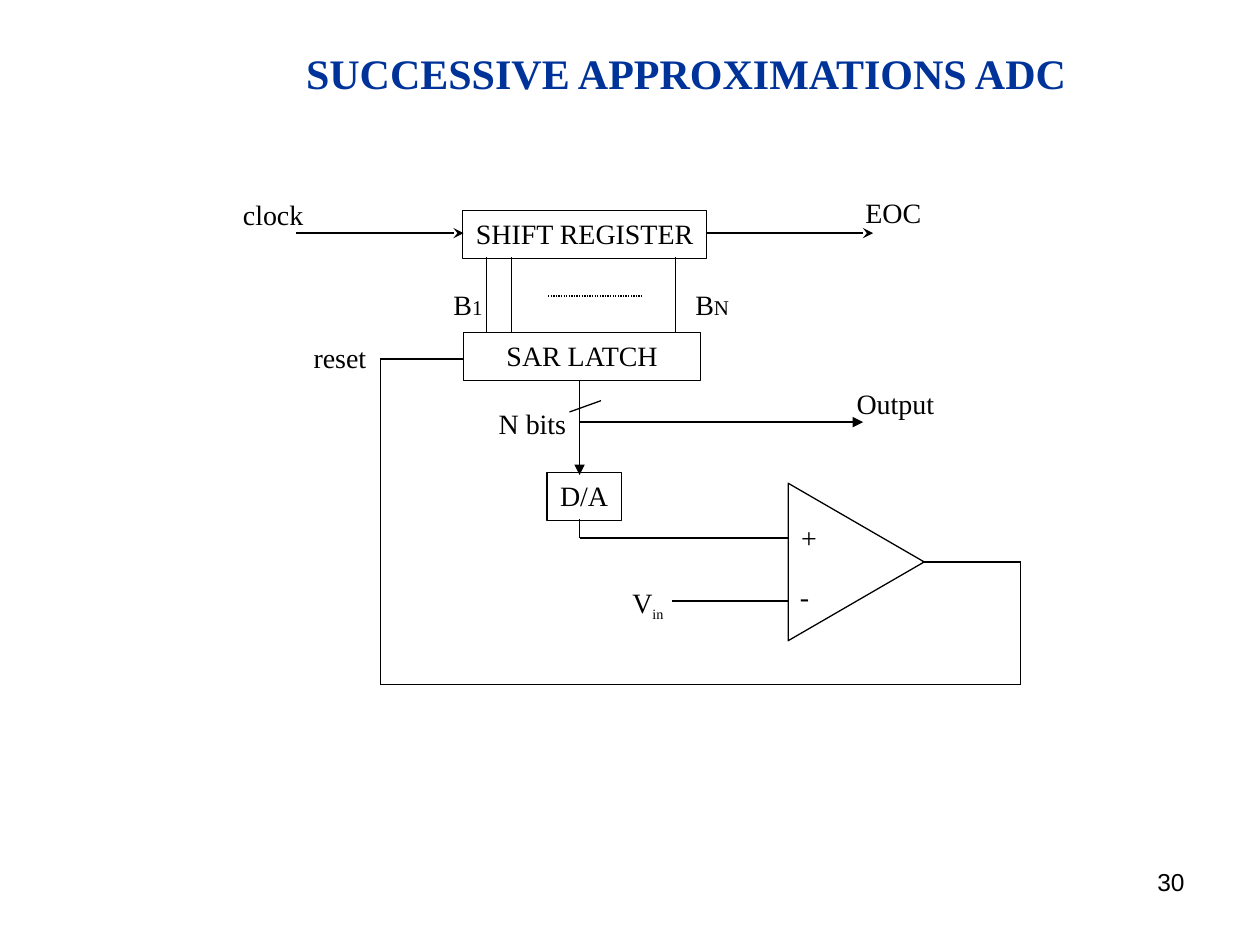
from dataclasses import dataclass

from lxml import etree
from pptx import Presentation
from pptx import util as u
from pptx.dml.color import RGBColor
from pptx.enum import dml, shapes, text
from pptx.oxml import ns

COLS, ROWS = 100, 75


@dataclass(frozen=True)
class Theme:
    ink: str = "000000"
    head: str = "003399"
    serif: str = "Times New Roman"
    sans: str = "Arial"
    title: int = 24
    body: int = 16
    page: int = 14
    sub: int = 14
    small: int = 12
    line: float = 0.75


T = Theme()
WIDE, HIGH = u.Inches(10), u.Inches(7.5)
LEFT, MID, RIGHT = text.PP_ALIGN.LEFT, text.PP_ALIGN.CENTER, text.PP_ALIGN.RIGHT


def col(n):
    return round(WIDE * n / COLS)


def row(n):
    return round(HIGH * n / ROWS)


def area(x, y, w, h):
    return col(x), row(y), col(w), row(h)


def add_run(para, words, size=T.body, font=T.serif, hue=T.ink, bold=False, drop=0):
    run = para.add_run()
    run.text = words
    run.font.size = u.Pt(size)
    run.font.name = font
    run.font.bold = bold
    run.font.color.rgb = RGBColor.from_string(hue)
    if drop:
        run.font._element.set("baseline", str(drop * 1000))


def set_up(frame, align, wrap=False):
    frame.word_wrap = wrap
    frame.vertical_anchor = text.MSO_ANCHOR.TOP
    para = frame.paragraphs[0]
    para.alignment = align
    return para


def label(slide, spot, words, align=LEFT, wrap=False, **style):
    box = slide.shapes.add_textbox(*area(*spot))
    para = set_up(box.text_frame, align, wrap)
    add_run(para, words, **style)
    return para


def ink_line(line):
    line.color.rgb = RGBColor.from_string(T.ink)
    line.width = u.Pt(T.line)


def outline(slide, kind, spot):
    shape = slide.shapes.add_shape(kind, *area(*spot))
    shape.shadow.inherit = False
    shape.fill.background()
    ink_line(shape.line)
    return shape


def block(slide, spot, words):
    shape = outline(slide, shapes.MSO_SHAPE.RECTANGLE, spot)
    add_run(set_up(shape.text_frame, MID), words)


def wire(slide, x1, y1, x2, y2, tip=None, dash=None):
    link = slide.shapes.add_connector(
        shapes.MSO_CONNECTOR.STRAIGHT, col(x1), row(y1), col(x2), row(y2))
    ink_line(link.line)
    if dash:
        link.line.dash_style = dash
    if tip:
        end = etree.SubElement(link.line._get_or_add_ln(), ns.qn("a:tailEnd"))
        end.set("type", tip)
    etree.SubElement(link._element.spPr, ns.qn("a:effectLst"))


def route(slide, *points):
    for start, stop in zip(points, points[1:]):
        wire(slide, *start, *stop)


def logic(slide):
    block(slide, (36.7, 16.7, 19.4, 3.8), "SHIFT REGISTER")
    block(slide, (36.8, 26.4, 18.8, 3.8), "SAR LATCH")
    block(slide, (43.4, 37.5, 5.9, 3.8), "D/A")
    for x in (38.6, 40.6, 53.6):
        wire(slide, x, 20.4, x, 26.4)
    wire(slide, 43.5, 23.5, 51, 23.5, dash=dml.MSO_LINE.ROUND_DOT)
    for x in (23.5, 56):
        wire(slide, x, 18.5, x + 13.3, 18.5, tip="stealth")
    wire(slide, 46, 30.2, 46, 37.7, tip="triangle")
    wire(slide, 46, 33.5, 68.5, 33.5, tip="triangle")
    wire(slide, 45.2, 32.7, 47.7, 31.8)


def compare(slide):
    amp = outline(slide, shapes.MSO_SHAPE.ISOSCELES_TRIANGLE, (61.7, 39.2, 12.5, 10.8))
    amp.rotation = 90
    route(slide, (46, 41.2), (46, 42.7), (62.5, 42.7))
    wire(slide, 62.5, 47.7, 53.3, 47.7)
    route(slide, (73.2, 44.6), (81, 44.6), (81, 54.3),
          (30.2, 54.3), (30.2, 28.5), (36.8, 28.5))


def names(slide):
    for x, y, w, words in (
        (18.3, 15.2, 6.8, "clock"), (67.7, 15, 6.4, "EOC"),
        (23.9, 26.5, 6.2, "reset"), (38.6, 31.8, 7.4, "N bits"),
        (67, 30.2, 8.2, "Output"), (62.6, 40.8, 3.3, "+"), (62.5, 45.5, 2.8, "-"),
    ):
        label(slide, (x, y, w, 3.7), words)
    for x, y, w, words, tail, style in (
        (35, 22.3, 4.3, "B", "1", {"size": T.small}),
        (54.2, 22.3, 4.7, "B", "N", {"size": T.small}),
        (49.2, 46, 4.6, "V", "in", {"size": T.sub, "drop": -25}),
    ):
        add_run(label(slide, (x, y, w, 3.7), words), tail, **style)


def main():
    deck = Presentation()
    deck.slide_width, deck.slide_height = WIDE, HIGH
    slide = deck.slides.add_slide(deck.slide_layouts[6])
    label(slide, (22.5, 3.3, 63.9, 5), "SUCCESSIVE APPROXIMATIONS ADC", MID,
          size=T.title, hue=T.head, bold=True)
    logic(slide)
    compare(slide)
    names(slide)
    label(slide, (71.7, 68.3, 23.3, 5.2), "30", RIGHT, True, size=T.page, font=T.sans)
    deck.save("out.pptx")


if __name__ == "__main__":
    main()
